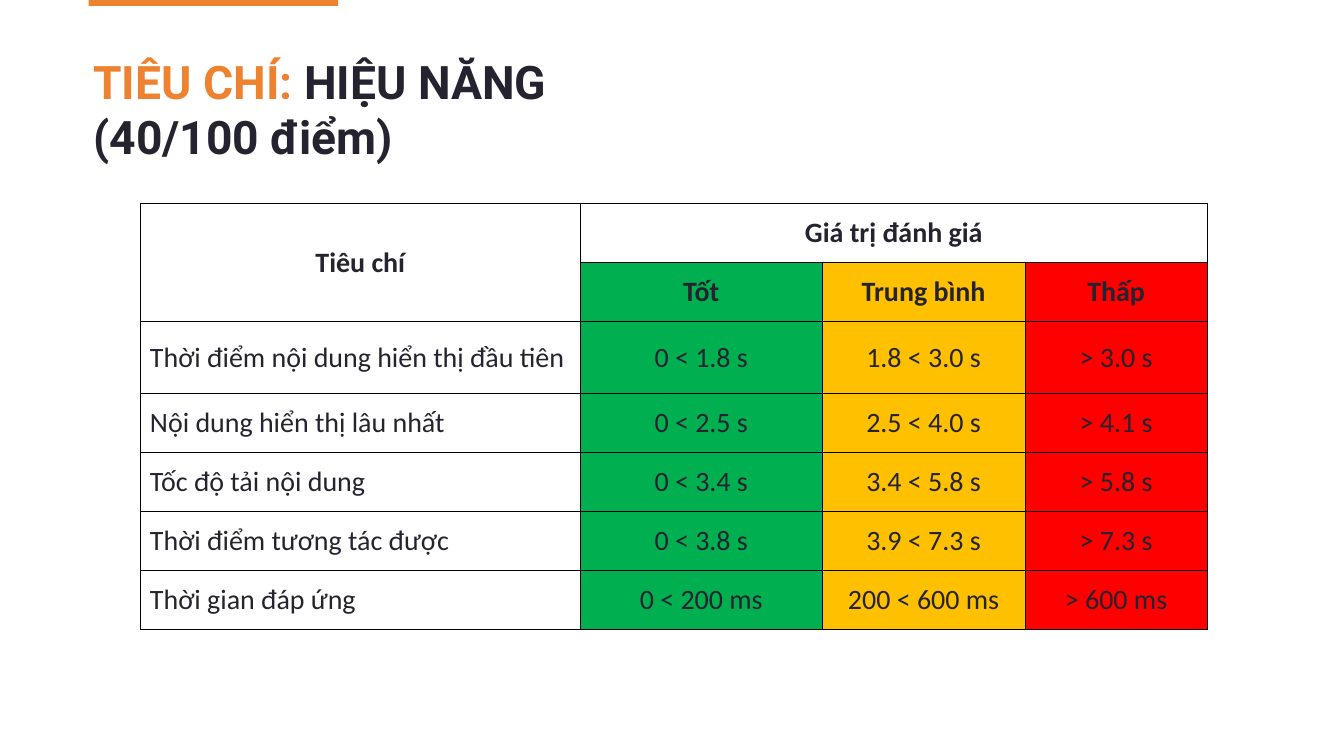
from typing import NamedTuple

from lxml.etree import SubElement
from pptx import Presentation
from pptx.dml.color import RGBColor
from pptx.enum.shapes import MSO_SHAPE
from pptx.enum.text import MSO_ANCHOR, MSO_AUTO_SIZE, PP_ALIGN
from pptx.oxml.ns import qn
from pptx.util import Cm, Pt

COLORS = {
    "accent": "ED8230",
    "text": "25232F",
    "border": "000000",
    "good": "00B050",
    "average": "FFC000",
    "low": "FF0000",
}
RATINGS = ("good", "average", "low")
HEADER_ROWS = 2


class Criterion(NamedTuple):
    name: str
    good: str
    average: str
    low: str


HEADINGS = [
    Criterion("Tiêu chí", "Giá trị đánh giá", "", ""),
    Criterion("", "Tốt", "Trung bình", "Thấp"),
]
CRITERIA = [
    Criterion("Thời điểm nội dung hiển thị đầu tiên", "0 < 1.8 s", "1.8 < 3.0 s", "> 3.0 s"),
    Criterion("Nội dung hiển thị lâu nhất", "0 < 2.5 s", "2.5 < 4.0 s", "> 4.1 s"),
    Criterion("Tốc độ tải nội dung", "0 < 3.4 s", "3.4 < 5.8 s", "> 5.8 s"),
    Criterion("Thời điểm tương tác được", "0 < 3.8 s", "3.9 < 7.3 s", "> 7.3 s"),
    Criterion("Thời gian đáp ứng", "0 < 200 ms", "200 < 600 ms", "> 600 ms"),
]
COLUMN_WIDTHS = [22.2, 12.17, 10.24, 9.17]
ROW_HEIGHTS = [2.97, 2.97, 3.63, 2.97, 2.97, 2.97, 2.97]


def rgb(name: str) -> RGBColor:
    return RGBColor.from_string(COLORS[name])


def format_span(span, font: str, size: float, color: str, bold: bool) -> None:
    span.font.name = font
    span.font.size = Pt(size)
    span.font.bold = bold
    span.font.color.rgb = rgb(color)


def add_accent_bar(slide) -> None:
    bar = slide.shapes.add_shape(MSO_SHAPE.RECTANGLE, Cm(4.47), 0, Cm(12.57), Cm(0.3))
    bar.shadow.inherit = False
    bar.fill.solid()
    bar.fill.fore_color.rgb = rgb("accent")
    bar.line.fill.background()


def fill_title(slide) -> None:
    title = slide.shapes.title
    title.left, title.top, title.width, title.height = Cm(4.45), Cm(2.26), Cm(59.03), Cm(6.4)
    frame = title.text_frame
    frame.word_wrap = True
    frame.auto_size = MSO_AUTO_SIZE.NONE
    frame.vertical_anchor = MSO_ANCHOR.MIDDLE
    frame.text = "TIÊU CHÍ: "
    para = frame.paragraphs[0]
    para.alignment = PP_ALIGN.LEFT
    para.add_run().text = "HIỆU NĂNG"
    para.add_line_break()
    para.add_run().text = "(40/100 điểm)"
    for span, color in zip(para.runs, ("accent", "text", "text")):
        format_span(span, "Roboto", 66, color, True)


def add_borders(cell) -> None:
    properties = cell._tc.get_or_add_tcPr()
    for side in ("lnL", "lnR", "lnT", "lnB"):
        line = SubElement(properties, qn(f"a:{side}"), w=str(Pt(1)))
        fill = SubElement(line, qn("a:solidFill"))
        SubElement(fill, qn("a:srgbClr"), val=COLORS["border"])


def format_cell(cell, text: str, row: int, column: int) -> None:
    is_header = row < HEADER_ROWS
    is_name = column == 0 and not is_header
    add_borders(cell)
    if row > 0 and column > 0:
        cell.fill.solid()
        cell.fill.fore_color.rgb = rgb(RATINGS[column - 1])
    else:
        cell.fill.background()
    cell.margin_top = cell.margin_right = cell.margin_bottom = Cm(0.18)
    cell.margin_left = Cm(0.5 if is_name else 0.18)
    cell.vertical_anchor = MSO_ANCHOR.MIDDLE
    cell.text_frame.text = text
    para = cell.text_frame.paragraphs[0]
    para.alignment = PP_ALIGN.JUSTIFY if is_name else PP_ALIGN.CENTER
    for span in para.runs:
        format_span(span, "Calibri", 40, "text", is_header)


def add_criteria_table(slide) -> None:
    records = HEADINGS + CRITERIA
    table = slide.shapes.add_table(
        len(records), len(COLUMN_WIDTHS), Cm(7.06), Cm(10.26),
        Cm(sum(COLUMN_WIDTHS)), Cm(sum(ROW_HEIGHTS)),
    ).table
    table.first_row = table.horz_banding = False
    for column, width in zip(table.columns, COLUMN_WIDTHS):
        column.width = Cm(width)
    for row, height in zip(table.rows, ROW_HEIGHTS):
        row.height = Cm(height)
    for row_index, record in enumerate(records):
        for column_index, text in enumerate(record):
            format_cell(table.cell(row_index, column_index), text, row_index, column_index)
    table.cell(0, 0).merge(table.cell(1, 0))
    table.cell(0, 1).merge(table.cell(0, 3))


def main() -> None:
    deck = Presentation()
    deck.slide_width, deck.slide_height = Cm(67.74), Cm(38.1)
    slide = deck.slides.add_slide(deck.slide_layouts.get_by_name("Title Only"))
    add_accent_bar(slide)
    fill_title(slide)
    add_criteria_table(slide)
    deck.save("out.pptx")


if __name__ == "__main__":
    main()
